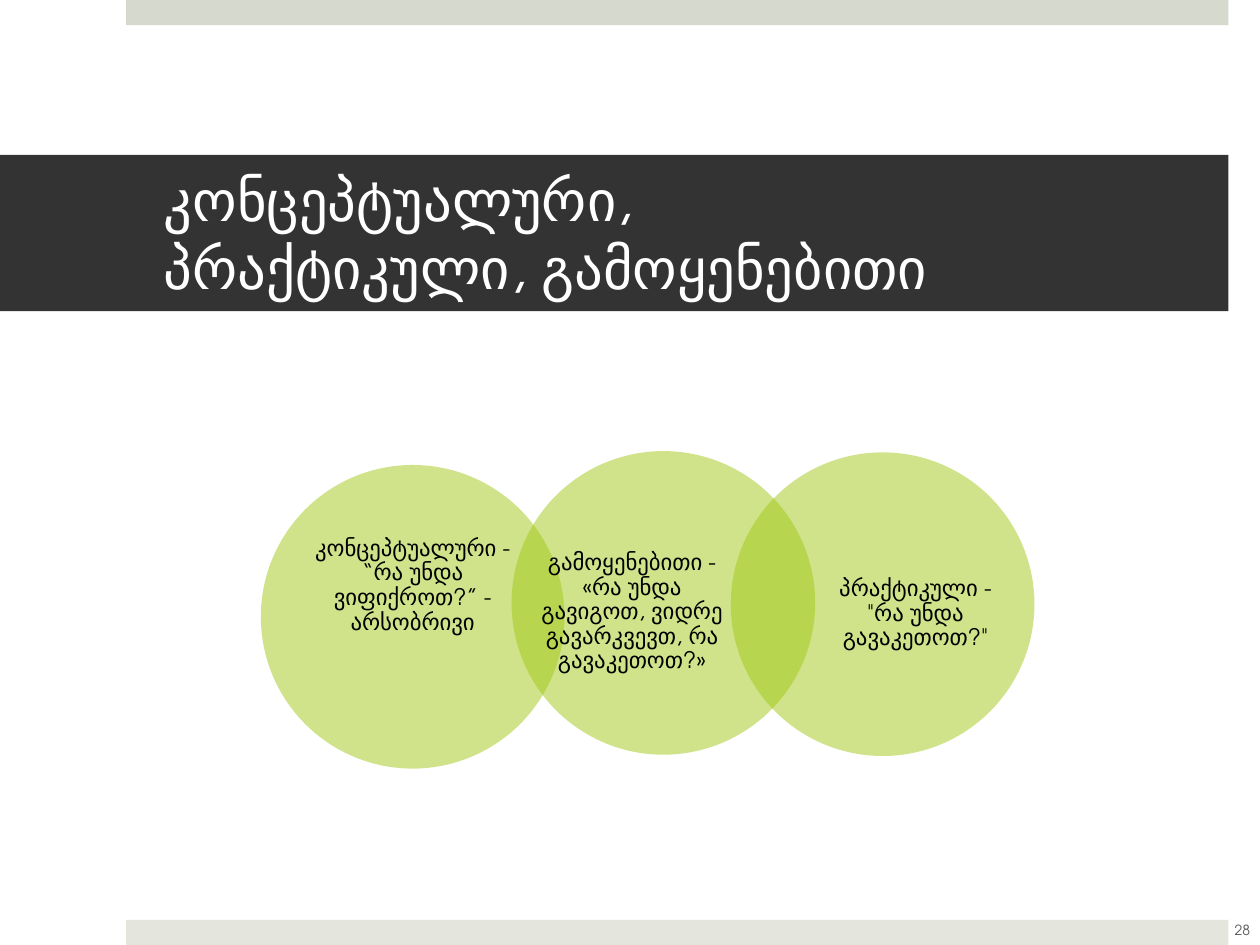
from lxml import etree
from pptx import Presentation
from pptx import util as u
from pptx.dml.color import RGBColor
from pptx.enum import shapes, text
from pptx.oxml.ns import qn


def color(value):
    return RGBColor.from_string(value)


class SlideBuilder:
    font_name = "TeX Gyre Adventor"
    circle_color = "A2C816"
    circle_size = 2.41

    def __init__(self, slide):
        self.slide = slide
        self.diagram = slide.shapes.add_group_shape()

    def set_text(self, shape, lines, size, font_color, alignment, insets):
        frame = shape.text_frame
        frame.word_wrap = True
        frame.auto_size = text.MSO_AUTO_SIZE.NONE
        frame.vertical_anchor = text.MSO_ANCHOR.MIDDLE
        (frame.margin_left, frame.margin_top,
         frame.margin_right, frame.margin_bottom) = map(u.Inches, insets)
        paragraph = frame.paragraphs[0]
        paragraph.alignment = alignment
        for index, line in enumerate(lines):
            if index:
                paragraph.add_line_break()
            run = paragraph.add_run()
            run.text = line
            run.font.name = self.font_name
            run.font.size = u.Pt(size)
            run.font.color.rgb = color(font_color)
        return paragraph

    def shape(self, parent, kind, box, fill):
        shape = parent.shapes.add_shape(kind, *map(u.Inches, box))
        shape.shadow.inherit = False
        shape.fill.solid()
        shape.fill.fore_color.rgb = color(fill)
        shape.line.fill.background()
        return shape

    def bar(self, top, fill):
        self.shape(self.slide, shapes.MSO_SHAPE.RECTANGLE, (1, top, 8.75, 0.2), fill)

    def title(self, lines, box):
        title = self.slide.shapes.title
        title.left, title.top, title.width, title.height = map(u.Inches, box)
        title.fill.solid()
        title.fill.fore_color.rgb = color("333333")
        self.set_text(title, lines, 32.4, "FFFFFF", text.PP_ALIGN.LEFT, (1.3, 0.05, 0.3, 0.05))

    def label(self, parent, content, box, size, font_color, insets):
        label = parent.shapes.add_textbox(*map(u.Inches, box))
        return self.set_text(label, [content], size, font_color, text.PP_ALIGN.CENTER, insets)

    def venn_circle(self, left, top, content, label_box):
        box = (left, top, self.circle_size, self.circle_size)
        circle = self.shape(self.diagram, shapes.MSO_SHAPE.OVAL, box, self.circle_color)
        fill_color = circle.element.spPr.find(qn("a:solidFill"))[0]
        etree.SubElement(fill_color, qn("a:alpha"), val="50000")
        paragraph = self.label(self.diagram, content, label_box, 13, "000000", (0, 0, 0, 0))
        paragraph.line_spacing = 0.9


def main():
    presentation = Presentation()
    presentation.slide_width = u.Inches(10)
    presentation.slide_height = u.Inches(7.5)
    slide = presentation.slides.add_slide(presentation.slide_layouts[5])
    builder = SlideBuilder(slide)

    builder.bar(0, "D6D9CD")
    builder.bar(7.3, "E4E6DE")
    builder.title(["კონცეპტუალური,", "პრაქტიკული, გამოყენებითი"], (0, 1.23, 9.75, 1.24))
    builder.label(slide, "28", (9.61, 7.18, 0.5, 0.4), 8, "595959", (0.1, 0.05, 0.1, 0.05))

    circles = [
        (2.07, 3.69, "კონცეპტუალური - “რა უნდა ვიფიქროთ?” - არსობრივი",
         (2.39, 4.11, 1.77, 1.08)),
        (5.8, 3.59, "პრაქტიკული - \"რა უნდა გავაკეთოთ?\"",
         (6.54, 4.21, 1.45, 1.32)),
        (4.06, 3.58, "გამოყენებითი - «რა უნდა გავიგოთ, ვიდრე გავარკვევთ, რა გავაკეთოთ?»",
         (4.29, 4.2, 1.45, 1.32)),
    ]
    for circle in circles:
        builder.venn_circle(*circle)

    presentation.save("out.pptx")


if __name__ == "__main__":
    main()
